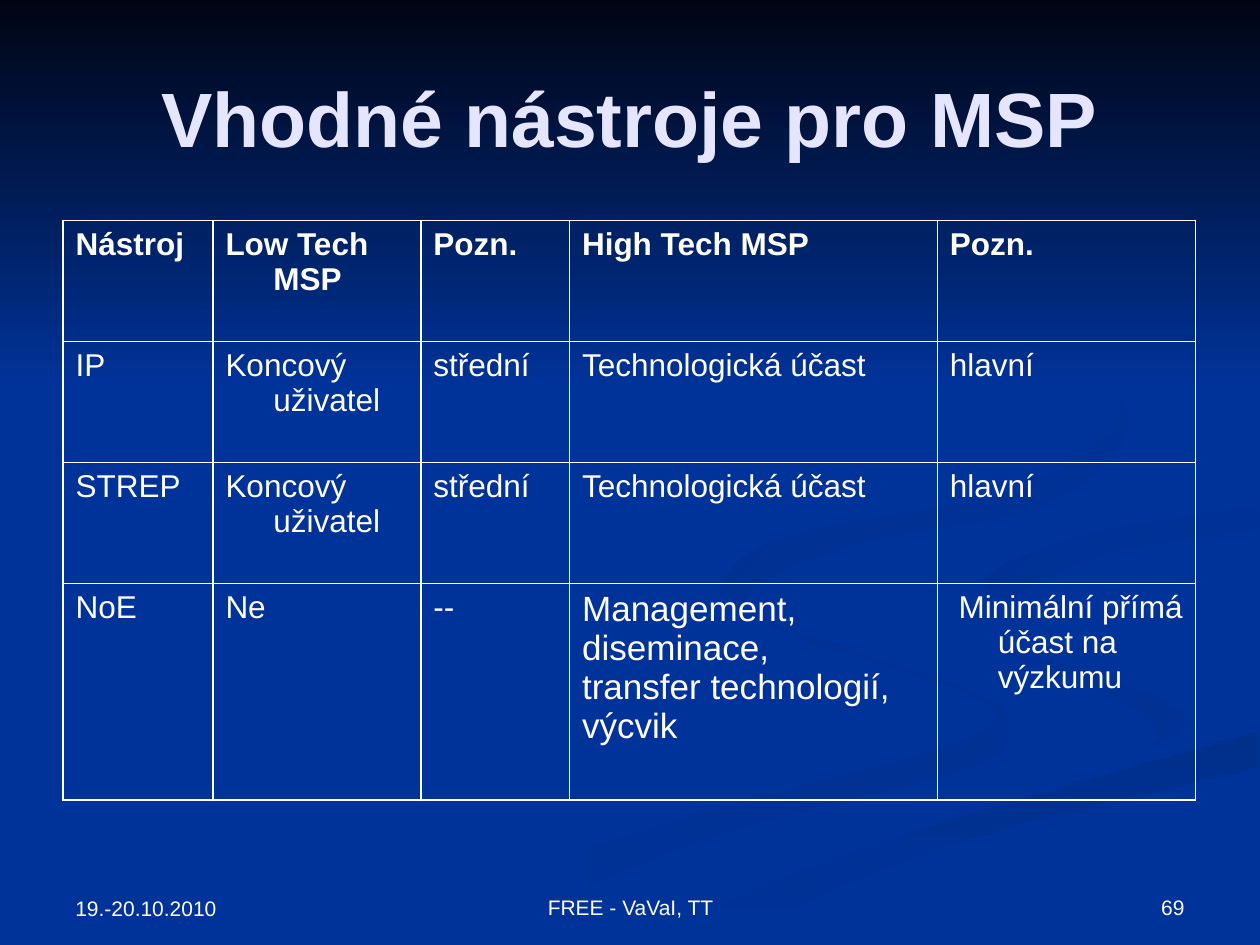
from dataclasses import dataclass

from lxml import etree
from pptx import Presentation
from pptx.dml.color import RGBColor
from pptx.enum.shapes import MSO_SHAPE
from pptx.enum.text import MSO_ANCHOR, PP_ALIGN
from pptx.oxml.ns import qn
from pptx.util import Inches, Pt

RECTANGLE = MSO_SHAPE.RECTANGLE
LEFT, CENTER, RIGHT = PP_ALIGN.LEFT, PP_ALIGN.CENTER, PP_ALIGN.RIGHT
MIDDLE, BOTTOM = MSO_ANCHOR.MIDDLE, MSO_ANCHOR.BOTTOM


@dataclass(frozen=True)
class Theme:
    font: str = "Arial"
    blue: str = "003399"
    night: str = "000514"
    white: str = "FFFFFF"
    title: str = "E5E5FF"
    title_size: int = 44
    cell_size: int = 18
    large_cell_size: int = 20
    footer_size: int = 12
    hanging: float = 0.38


THEME = Theme()


@dataclass(frozen=True)
class Ribbon:
    """A swirl bounded by smooth edges, with knots in hundredths of an inch."""
    start: str
    end: str
    angle: int
    edges: tuple


@dataclass(frozen=True)
class Label:
    text: str
    left: float
    top: float
    width: float
    height: float
    size: int = THEME.footer_size
    color: str = THEME.white
    bold: bool = False
    align: PP_ALIGN = LEFT
    anchor: MSO_ANCHOR = BOTTOM


# Edge shared by the two neighbouring ribbons at the bottom right
SEAM = ((503, 749), (630, 693), (797, 638), (998, 581))

RIBBONS = (
    Ribbon(THEME.blue, "003193", 0, (
        ((575, 459), (594, 485), (682, 519), (781, 553), (799, 578),
         (769, 609), (564, 665), (361, 749)),
        ((300, 749), (417, 690), (579, 639), (759, 590), (781, 556),
         (631, 505), (570, 470)))),
    Ribbon(THEME.blue, "003193", 45, (
        ((724, 464), (745, 490), (870, 530), (943, 570), (894, 605)),
        ((894, 605), (918, 581), (868, 544), (746, 500), (724, 464)))),
    Ribbon("002F8C", THEME.blue, 90, (
        ((998, 609), (785, 661), (670, 702), (571, 749)), SEAM)),
    Ribbon(THEME.blue, THEME.blue, 0, (
        ((999, 387), (808, 417), (725, 464), (793, 509), (943, 573),
         (780, 634), (619, 684), (477, 749)),
        SEAM,
        ((999, 538), (866, 509), (781, 463), (865, 424), (999, 402)))),
    Ribbon("003091", THEME.blue, 45, (
        ((998, 402), (865, 424), (781, 460), (826, 496)),
        ((826, 496), (805, 476), (878, 439), (998, 420)))),
    Ribbon("002F8E", THEME.blue, 45, (
        ((762, 233), (864, 291), (894, 344), (825, 402), (683, 430),
         (593, 470), (622, 500)),
        ((622, 500), (577, 462), (625, 426), (791, 392), (889, 335),
         (846, 279), (762, 233)))),
)

LABELS = (
    Label("19.-20.10.2010", 0.5, 6.84, 2.33, 0.52),
    Label("69", 7.17, 6.83, 2.33, 0.52, align=RIGHT),
    Label("FREE - VaVaI, TT", 3.42, 6.83, 3.17, 0.52, align=CENTER),
    Label("Vhodné nástroje pro MSP", 0.5, 0.3, 9, 1.25, size=THEME.title_size,
          color=THEME.title, bold=True, align=CENTER, anchor=MIDDLE),
)

COLUMN_WIDTHS = (1.19, 1.65, 1.18, 2.92, 2.05)
ROW_HEIGHTS = (0.96, 0.96, 0.96, 1.72)
INSTRUMENTS = (
    ("Nástroj", "Low Tech MSP", "Pozn.", "High Tech MSP", "Pozn."),
    ("IP", "Koncový uživatel", "střední", "Technologická účast", "hlavní"),
    ("STREP", "Koncový uživatel", "střední", "Technologická účast", "hlavní"),
    ("NoE", "Ne", "--",
     "Management,\ndiseminace,\ntransfer technologií,\nvýcvik",
     " Minimální přímá účast na výzkumu"),
)


def write_text(frame, text: str, *, size: int, color: str = THEME.white,
               bold: bool = False, align: PP_ALIGN = LEFT, hanging: float = 0) -> None:
    for index, line in enumerate(text.split("\n")):
        para = frame.add_paragraph() if index else frame.paragraphs[0]
        para.alignment = align
        if hanging:
            properties = para._p.get_or_add_pPr()
            properties.set("marL", str(Inches(hanging)))
            properties.set("indent", str(-Inches(hanging)))
        span = para.add_run()
        span.text = line
        span.font.name = THEME.font
        span.font.size = Pt(size)
        span.font.bold = bold
        span.font.color.rgb = RGBColor.from_string(color)


def paint(shape, start: str, end: str, angle: int) -> None:
    shape.shadow.inherit = False
    shape.line.fill.background()
    if start == end:
        shape.fill.solid()
        shape.fill.fore_color.rgb = RGBColor.from_string(start)
        return
    shape.fill.gradient()
    shape.fill.gradient_angle = (360 - angle) % 360
    for stop, color in zip(shape.fill.gradient_stops, (start, end)):
        stop.color.rgb = RGBColor.from_string(color)


def smooth_edge(knots: tuple, steps: int = 6) -> list[tuple[int, int]]:
    """Run a Catmull-Rom curve through the knots."""
    padded = (knots[0], *knots, knots[-1])
    points = [knots[0]]
    for before, here, there, after in zip(padded, padded[1:], padded[2:], padded[3:]):
        for step in range(1, steps + 1):
            t = step / steps
            points.append(tuple(
                round((2 * b + (c - a) * t + (2 * a - 5 * b + 4 * c - d) * t ** 2
                       + (3 * b - a - 3 * c + d) * t ** 3) / 2)
                for a, b, c, d in zip(before, here, there, after)))
    return points


def draw_ribbon(page, ribbon: Ribbon) -> None:
    first, *rest = [point for edge in ribbon.edges for point in smooth_edge(edge)]
    builder = page.shapes.build_freeform(*first, scale=Inches(0.01))
    builder.add_line_segments(rest, close=True)
    paint(builder.convert_to_shape(), ribbon.start, ribbon.end, ribbon.angle)


def draw_label(page, label: Label) -> None:
    area = (label.left, label.top, label.width, label.height)
    box = page.shapes.add_textbox(*map(Inches, area))
    box.text_frame.word_wrap = True
    box.text_frame.vertical_anchor = label.anchor
    write_text(box.text_frame, label.text, size=label.size, color=label.color,
               bold=label.bold, align=label.align)


def add_borders(cell) -> None:
    properties = cell._tc.get_or_add_tcPr()
    for side in ("a:lnL", "a:lnR", "a:lnT", "a:lnB"):
        line = etree.SubElement(properties, qn(side), w=str(Pt(1)))
        fill = etree.SubElement(line, qn("a:solidFill"))
        etree.SubElement(fill, qn("a:srgbClr"), val=THEME.white)


def draw_table(page) -> None:
    table = page.shapes.add_table(
        len(ROW_HEIGHTS), len(COLUMN_WIDTHS), Inches(0.5), Inches(1.75),
        Inches(sum(COLUMN_WIDTHS)), Inches(sum(ROW_HEIGHTS))).table
    table.first_row = table.horz_banding = False
    for column, width in zip(table.columns, COLUMN_WIDTHS):
        column.width = Inches(width)
    for row_index, (row, height) in enumerate(zip(table.rows, ROW_HEIGHTS)):
        row.height = Inches(height)
        for cell, text in zip(row.cells, INSTRUMENTS[row_index]):
            add_borders(cell)
            cell.fill.background()
            size = THEME.large_cell_size if "\n" in text else THEME.cell_size
            write_text(cell.text_frame, text, size=size, bold=row_index == 0,
                       hanging=THEME.hanging)


def main() -> None:
    deck = Presentation()
    deck.slide_width, deck.slide_height = Inches(10), Inches(7.5)
    page = deck.slides.add_slide(deck.slide_layouts[6])

    # Background: swirls, then the dark band fading down into the blue
    page.background.fill.solid()
    page.background.fill.fore_color.rgb = RGBColor.from_string(THEME.blue)
    for ribbon in RIBBONS:
        draw_ribbon(page, ribbon)
    band = page.shapes.add_shape(RECTANGLE, 0, 0, Inches(10), Inches(3.08))
    paint(band, THEME.night, THEME.blue, 90)

    # Footer, title and table
    for label in LABELS:
        draw_label(page, label)
    draw_table(page)
    deck.save("out.pptx")


if __name__ == "__main__":
    main()
